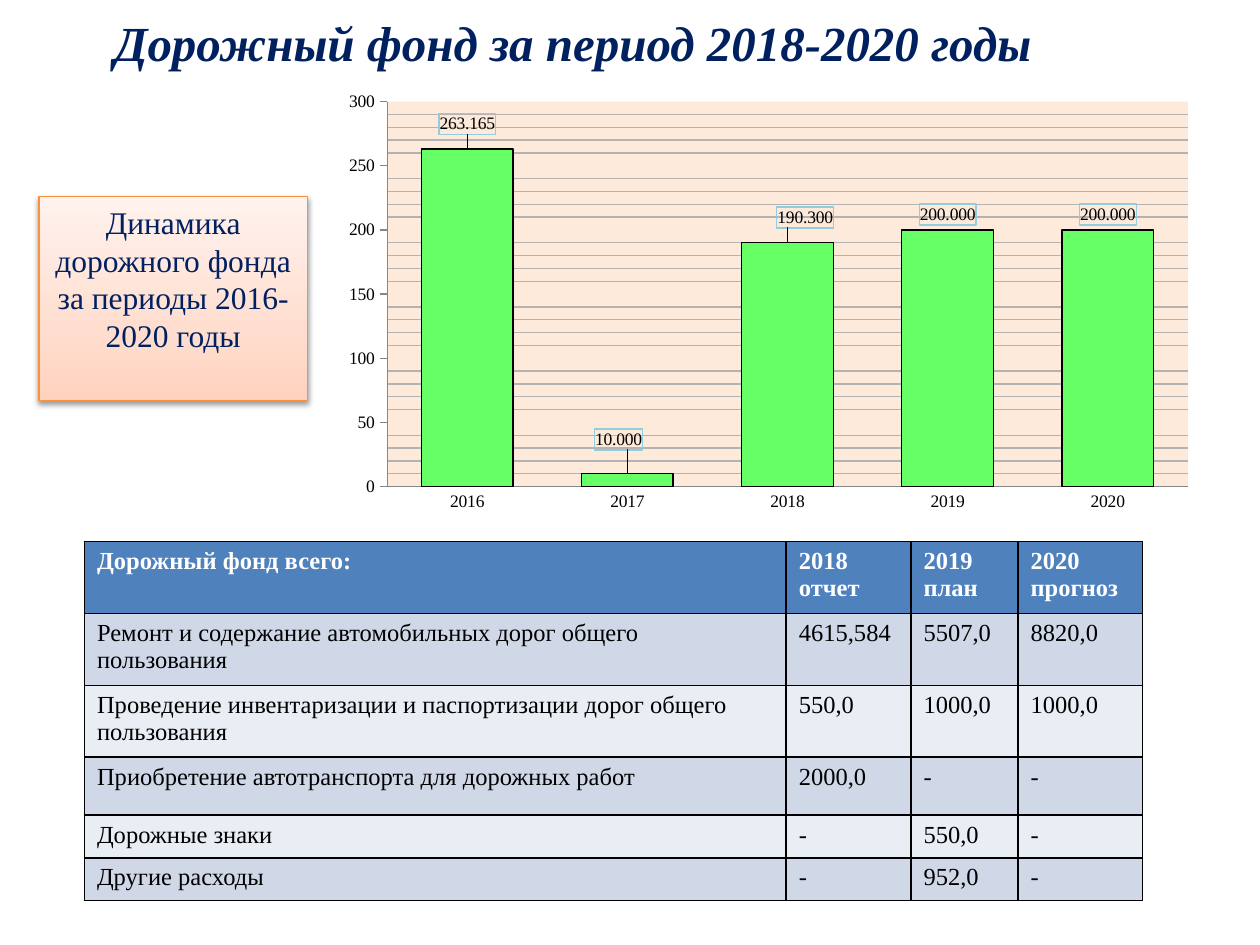
from copy import deepcopy
from dataclasses import dataclass

from lxml.etree import SubElement
from pptx import Presentation
from pptx.chart.data import CategoryChartData
from pptx.dml.color import RGBColor
from pptx.enum.chart import XL_CHART_TYPE as ChartType
from pptx.enum.chart import XL_LABEL_POSITION as LabelPosition
from pptx.enum.chart import XL_TICK_MARK as TickMark
from pptx.enum.shapes import MSO_SHAPE as Shape
from pptx.enum.text import MSO_ANCHOR as Anchor
from pptx.enum.text import PP_ALIGN as Align
from pptx.oxml import parse_xml
from pptx.oxml.ns import nsdecls, qn
from pptx.util import Inches, Pt

WIDTH, HEIGHT = Inches(10), Inches(7.5)
FONT = "Times New Roman"
COLORS = {
    "navy": "002060", "black": "000000", "white": "FFFFFF",
    "header": "4F81BD", "dark_band": "D0D8E8", "light_band": "E9EDF4",
    "bar": "66FF66", "plot": "FDEADA", "grid": "B3B3B3", "axis": "868686",
    "label_frame": "93CDDD", "note_line": "F69240",
}
NOTE_GRADIENT = ((0, "FFD2BD"), (35, "FFDED0"), (100, "FFF2ED"))

COLUMN_WIDTHS = (5.57, 0.99, 0.85, 0.99)
ROW_HEIGHTS = (0.57, 0.57, 0.57, 0.46, 0.34, 0.34)
EXPENSES = (
    ("Дорожный фонд всего:", "2018 отчет", "2019 план", "2020 прогноз"),
    ("Ремонт и содержание автомобильных дорог общего пользования",
     "4615,584", "5507,0", "8820,0"),
    ("Проведение инвентаризации и паспортизации дорог общего пользования",
     "550,0", "1000,0", "1000,0"),
    ("Приобретение автотранспорта для дорожных работ", "2000,0", "-", "-"),
    ("Дорожные знаки", "-", "550,0", "-"),
    ("Другие расходы", "-", "952,0", "-"),
)


@dataclass(frozen=True)
class Box:
    """A place on the slide, in percent of its width and height."""
    left: float
    top: float
    width: float
    height: float

    def lengths(self) -> tuple:
        return tuple(int(share * side / 100) for share, side in (
            (self.left, WIDTH), (self.top, HEIGHT),
            (self.width, WIDTH), (self.height, HEIGHT)))


@dataclass(frozen=True)
class YearBar:
    year: str
    value: float
    label_shift: tuple = ()  # shares of the chart's width and height


YEAR_BARS = (
    YearBar("2016", 263.165, (0, -0.02)),
    YearBar("2017", 10, (-0.01, -0.04)),
    YearBar("2018", 190.3, (0.02, -0.02)),
    YearBar("2019", 200),
    YearBar("2020", 200),
)


def color(name: str) -> RGBColor:
    return RGBColor.from_string(COLORS[name])


def style_font(font, size: float, color_name: str, bold=False, italic=False):
    font.name, font.size = FONT, Pt(size)
    font.bold, font.italic = bold, italic
    font.color.rgb = color(color_name)


def style_line(line, color_name: str, width: float = 0.75):
    line.color.rgb = color(color_name)
    line.width = Pt(width)


def write_centred(shape, text: str, size: float, **style):
    frame = shape.text_frame
    frame.word_wrap = True
    frame.vertical_anchor = Anchor.TOP
    paragraph = frame.paragraphs[0]
    paragraph.text = text
    paragraph.alignment = Align.CENTER
    style_font(paragraph.font, size, "navy", **style)


def add_note(slide, box: Box, text: str):
    note = slide.shapes.add_shape(Shape.RECTANGLE, *box.lengths())
    note.fill.gradient()
    note.fill.gradient_angle = 90
    properties = note._element.spPr
    stops = properties.find(".//" + qn("a:gsLst"))
    stops.clear()
    for position, value in NOTE_GRADIENT:
        stop = SubElement(stops, qn("a:gs"), pos=str(position * 1000))
        SubElement(stop, qn("a:srgbClr"), val=value)
    style_line(note.line, "note_line")
    properties.append(parse_xml(
        f'<a:effectLst {nsdecls("a")}><a:outerShdw blurRad="{Pt(3.1)}" '
        f'dist="{Pt(1.6)}" dir="5400000" rotWithShape="0">'
        '<a:srgbClr val="000000"><a:alpha val="38000"/></a:srgbClr>'
        '</a:outerShdw></a:effectLst>'))
    write_centred(note, text, 18)


def manual_layout(content: str):
    return parse_xml(f'<c:layout {nsdecls("c")}><c:manualLayout>{content}'
                     '</c:manualLayout></c:layout>')


def chart_outline(color_name: str):
    return parse_xml(
        f'<c:spPr {nsdecls("c", "a")}><a:ln w="{Pt(0.75)}"><a:solidFill>'
        f'<a:srgbClr val="{COLORS[color_name]}"/></a:solidFill></a:ln></c:spPr>')


def style_labels(series):
    labels = series.data_labels
    labels.show_value = True
    labels.number_format, labels.number_format_is_linked = "0.000", False
    labels.position = LabelPosition.OUTSIDE_END
    style_font(labels.font, 10, "black")
    number_format = labels._element.find(qn("c:numFmt"))
    number_format.addnext(chart_outline("label_frame"))
    for index, bar in enumerate(YEAR_BARS):
        if not bar.label_shift:
            continue
        label = series.points[index].data_label
        label.position = LabelPosition.OUTSIDE_END
        shift_x, shift_y = bar.label_shift
        layout = manual_layout(f'<c:x val="{shift_x}"/><c:y val="{shift_y}"/>')
        label_element = label._dLbl
        for old_properties in label_element.findall(qn("c:spPr")):
            label_element.remove(old_properties)
        label_element.find(qn("c:idx")).addnext(layout)
        point_format = deepcopy(number_format)
        layout.addnext(point_format)
        point_format.addnext(chart_outline("label_frame"))


def style_plot_area(chart):
    area = chart._chartSpace.chart.plotArea
    for old_layout in area.findall(qn("c:layout")):
        area.remove(old_layout)
    area.insert(0, manual_layout(
        '<c:layoutTarget val="inner"/><c:xMode val="edge"/><c:yMode val="edge"/>'
        '<c:x val="0.073"/><c:y val="0.063"/>'
        '<c:w val="0.904"/><c:h val="0.813"/>'))
    area.append(parse_xml(
        f'<c:spPr {nsdecls("c", "a")}><a:solidFill>'
        f'<a:srgbClr val="{COLORS["plot"]}"/></a:solidFill></c:spPr>'))


def add_fund_chart(slide, box: Box):
    data = CategoryChartData()
    data.categories = [bar.year for bar in YEAR_BARS]
    data.add_series("Series 1", [bar.value for bar in YEAR_BARS])
    chart = slide.shapes.add_chart(
        ChartType.COLUMN_CLUSTERED, *box.lengths(), data).chart
    chart.has_legend = chart.has_title = False
    style_font(chart.font, 10, "black")
    plot = chart.plots[0]
    plot.gap_width, plot.vary_by_categories = 75, False
    series = plot.series[0]
    series.format.fill.solid()
    series.format.fill.fore_color.rgb = color("bar")
    style_line(series.format.line, "black")
    style_labels(series)
    years, amounts = chart.category_axis, chart.value_axis
    for axis in (years, amounts):
        style_line(axis.format.line, "axis")
    years.major_tick_mark = TickMark.NONE
    amounts.major_tick_mark = TickMark.OUTSIDE
    amounts.minimum_scale, amounts.maximum_scale = 0, 300
    amounts.major_unit, amounts.minor_unit = 50, 10
    amounts.has_major_gridlines, amounts.has_minor_gridlines = False, True
    gridlines = amounts._element.find(qn("c:minorGridlines"))
    gridlines.append(chart_outline("grid"))
    amounts.tick_labels.number_format = "0"
    amounts.tick_labels.number_format_is_linked = False
    style_plot_area(chart)


def fill_cell(cell, text: str, fill_name: str, is_header: bool):
    properties = cell._tc.get_or_add_tcPr()
    for side in ("lnL", "lnR", "lnT", "lnB"):
        border = SubElement(properties, qn(f"a:{side}"), w=str(Pt(1)))
        solid = SubElement(border, qn("a:solidFill"))
        SubElement(solid, qn("a:srgbClr"), val=COLORS["black"])
    cell.fill.solid()
    cell.fill.fore_color.rgb = color(fill_name)
    cell.text = text
    style_font(cell.text_frame.paragraphs[0].font, 14,
               "white" if is_header else "black", bold=is_header)


def add_expense_table(slide, box: Box):
    table = slide.shapes.add_table(
        len(ROW_HEIGHTS), len(COLUMN_WIDTHS), *box.lengths()).table
    for column, width in zip(table.columns, COLUMN_WIDTHS):
        column.width = Inches(width)
    for row, height, texts in zip(table.rows, ROW_HEIGHTS, EXPENSES):
        row.height = Inches(height)
        index = EXPENSES.index(texts)
        band = "dark_band" if index % 2 else "light_band"
        for cell, text in zip(row.cells, texts):
            fill_cell(cell, text, band if index else "header", index == 0)


def main():
    presentation = Presentation()
    presentation.slide_width, presentation.slide_height = WIDTH, HEIGHT
    slide = presentation.slides.add_slide(presentation.slide_layouts[6])
    title = slide.shapes.add_textbox(*Box(3.1, 0.67, 84.7, 7.6).lengths())
    write_centred(title, "Дорожный фонд за период 2018-2020 годы", 28,
                  bold=True, italic=True)
    add_expense_table(slide, Box(6.7, 57.33, 83.9, 38))
    add_fund_chart(slide, Box(25.6, 7.6, 70.3, 50.13))
    add_note(slide, Box(3.1, 20.8, 21.3, 21.6),
             "Динамика дорожного фонда за периоды 2016-2020 годы")
    presentation.save("out.pptx")


if __name__ == "__main__":
    main()
